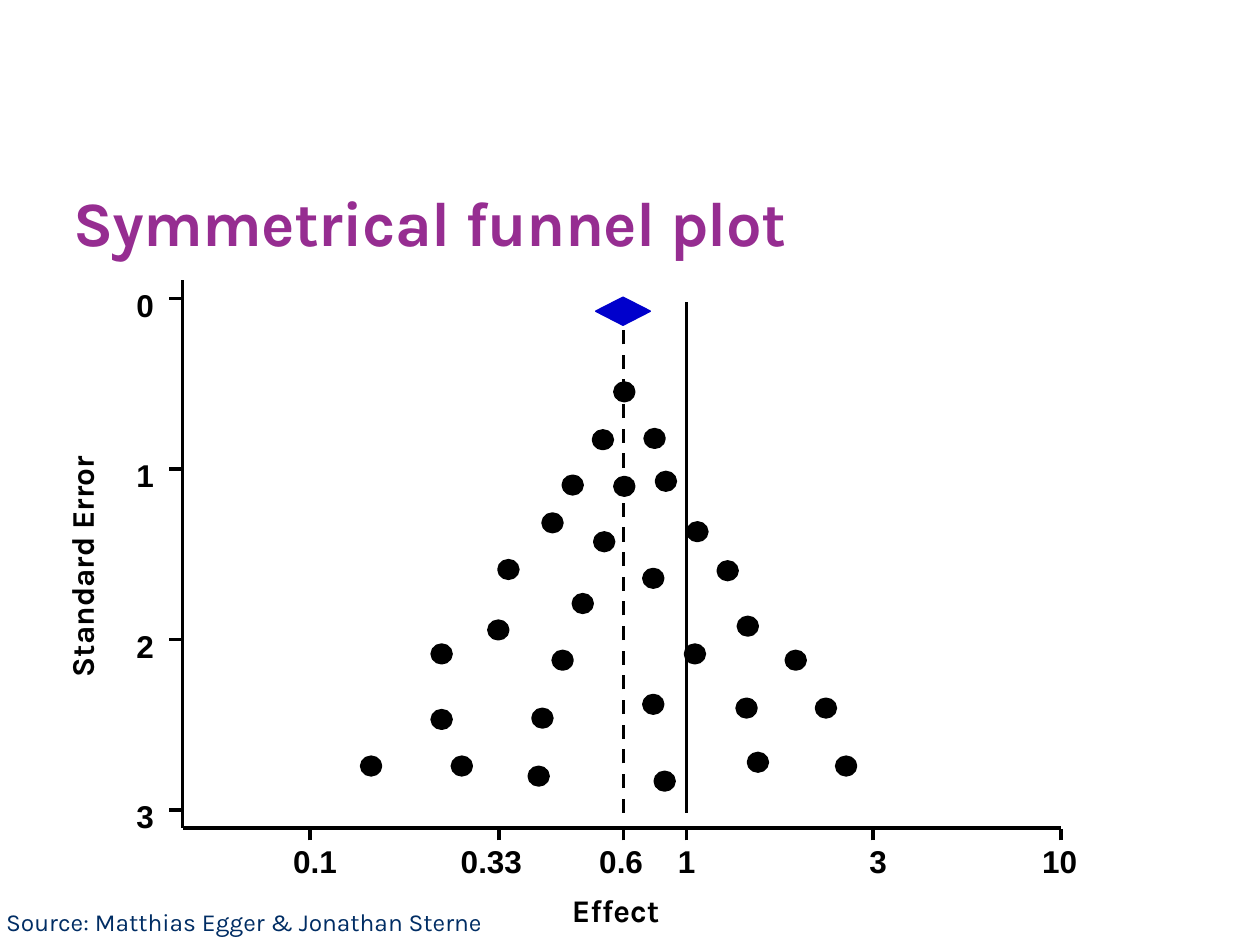
from pptx import Presentation
from pptx.dml.color import RGBColor
from pptx.enum.dml import MSO_LINE
from pptx.enum.shapes import MSO_CONNECTOR, MSO_SHAPE
from pptx.enum.text import MSO_ANCHOR, MSO_AUTO_SIZE, PP_ALIGN
from pptx.oxml.ns import qn
from pptx.util import Inches, Pt
from lxml import etree

LEFT, MID, RIGHT = PP_ALIGN.LEFT, PP_ALIGN.CENTER, PP_ALIGN.RIGHT
TOP, BOTTOM = MSO_ANCHOR.TOP, MSO_ANCHOR.BOTTOM
FIT, FIXED = MSO_AUTO_SIZE.SHAPE_TO_FIT_TEXT, MSO_AUTO_SIZE.NONE
OVAL, DIAMOND = MSO_SHAPE.OVAL, MSO_SHAPE.DIAMOND
STRAIGHT, DASH = MSO_CONNECTOR.STRAIGHT, MSO_LINE.DASH
BLACK, PURPLE, NAVY, BLUE = "000000", "962D91", "002D64", "0000CC"

X_AXIS, Y_AXIS, X_END, Y_TOP = 6.57, 1.45, 8.42, 2.22
POOLED, NULL = 4.95, 5.45
X_TICKS = [
    ("0.1", 2.46, 2.5, 0.64), ("0.33", 3.96, 3.9, 0.81),
    ("0.6", POOLED, 4.93, 0.64), ("1", NULL, 5.45, 0.4),
    ("3", 6.93, 6.97, 0.4), ("10", X_END, 8.41, 0.56),
]
STUDIES = [
    (4.88, 3.04), (4.71, 3.42), (5.12, 3.41), (4.47, 3.78), (4.88, 3.79),
    (5.21, 3.75), (4.31, 4.08), (4.72, 4.23), (5.46, 4.15), (3.96, 4.45),
    (5.11, 4.52), (5.7, 4.46), (4.55, 4.72), (3.88, 4.93), (5.86, 4.9),
    (3.43, 5.12), (4.39, 5.17), (5.44, 5.12), (6.24, 5.17), (3.43, 5.64),
    (4.23, 5.63), (5.11, 5.52), (5.85, 5.55), (6.48, 5.55), (2.87, 6.01),
    (3.59, 6.01), (4.2, 6.09), (5.2, 6.13), (5.94, 5.98), (6.64, 6.01),
]


def color(code):
    """Turn a hex string into a colour."""
    return RGBColor.from_string(code)


class Plot:
    """Hold the style and the current slide."""

    def __init__(self, slide, font="Karla", size=18, ink=BLACK):
        self.slide, self.font, self.size, self.ink = slide, font, size, ink

    def text(self, words, box, font=None, size=None, ink=None, bold=True,
             align=LEFT, anchor=TOP, wrap=False, fit=FIT, pad=(0.1, 0.05, 0.1, 0.05),
             turn=0, track=None):
        """Add a text box with one formatted run."""
        shape = self.slide.shapes.add_textbox(*map(Inches, box))
        shape.rotation = turn
        frame = shape.text_frame
        frame.word_wrap, frame.auto_size, frame.vertical_anchor = wrap, fit, anchor
        (frame.margin_left, frame.margin_top,
         frame.margin_right, frame.margin_bottom) = map(Inches, pad)
        para = frame.paragraphs[0]
        para.alignment = align
        run = para.add_run()
        run.text = words
        run.font.name = font or self.font
        run.font.size = Pt(size or self.size)
        run.font.bold = bold
        run.font.color.rgb = color(ink or self.ink)
        if track is not None:
            run._r.get_or_add_rPr().set("spc", str(track))

    def line(self, start, end, width=2, dash=None):
        """Add a straight line."""
        line = self.slide.shapes.add_connector(STRAIGHT, *map(Inches, start + end))
        line.line.color.rgb = color(self.ink)
        line.line.width = Pt(width)
        if dash is not None:
            line.line.dash_style = dash
        etree.SubElement(line._element.spPr, qn("a:effectLst"))

    def mark(self, kind, box, ink=None, width=2):
        """Add a filled marker."""
        shape = self.slide.shapes.add_shape(kind, *map(Inches, box))
        shape.shadow.inherit = False
        shape.fill.solid()
        shape.fill.fore_color.rgb = color(ink or self.ink)
        shape.line.color.rgb = color(ink or self.ink)
        shape.line.width = Pt(width)


def main():
    """Build the funnel plot slide."""
    deck = Presentation()
    deck.slide_width, deck.slide_height = Inches(10), Inches(7.5)
    plot = Plot(deck.slides.add_slide(deck.slide_layouts[6]))

    plot.text("Symmetrical funnel plot", (0.45, 1.37, 6.69, 0.69), size=36,
              ink=PURPLE, anchor=BOTTOM, wrap=True, fit=FIXED,
              pad=(0.13, 0, 0, 0), track=-40)
    plot.text("Standard Error", (-0.42, 4.1, 2.24, 0.51), turn=270)
    plot.text("Effect", (4.44, 7.02, 0.99, 0.51))
    plot.text("Source: Matthias Egger & Jonathan Sterne", (-0.05, 7.15, 4.05, 0.34),
              size=14, ink=NAVY, bold=False, wrap=True)

    plot.line((X_END, X_AXIS), (Y_AXIS, X_AXIS))
    plot.line((Y_AXIS, X_AXIS), (Y_AXIS, Y_TOP))
    for label, tick, mid, width in X_TICKS:
        plot.text(label, (mid - width / 2, 6.63, width, 0.47), font="Arial", align=MID)
        plot.line((tick, X_AXIS + 0.1), (tick, X_AXIS + 0.01))
    for step in range(4):
        tick = 2.37 + step * 4.06 / 3
        plot.text(str(step), (0.92, tick - 0.15, 0.4, 0.47), font="Arial", align=RIGHT)
        plot.line((Y_AXIS, tick), (Y_AXIS - 0.11, tick))

    plot.line((POOLED, 6.45), (POOLED, 2.4), dash=DASH)
    for left, top in STUDIES:
        plot.mark(OVAL, (left, top, 0.15, 0.14))
    plot.line((NULL, 6.45), (NULL, 2.4), width=1.5)
    plot.mark(DIAMOND, (4.73, 2.36, 0.43, 0.22), ink=BLUE, width=1)
    deck.save("out.pptx")


if __name__ == "__main__":
    main()
